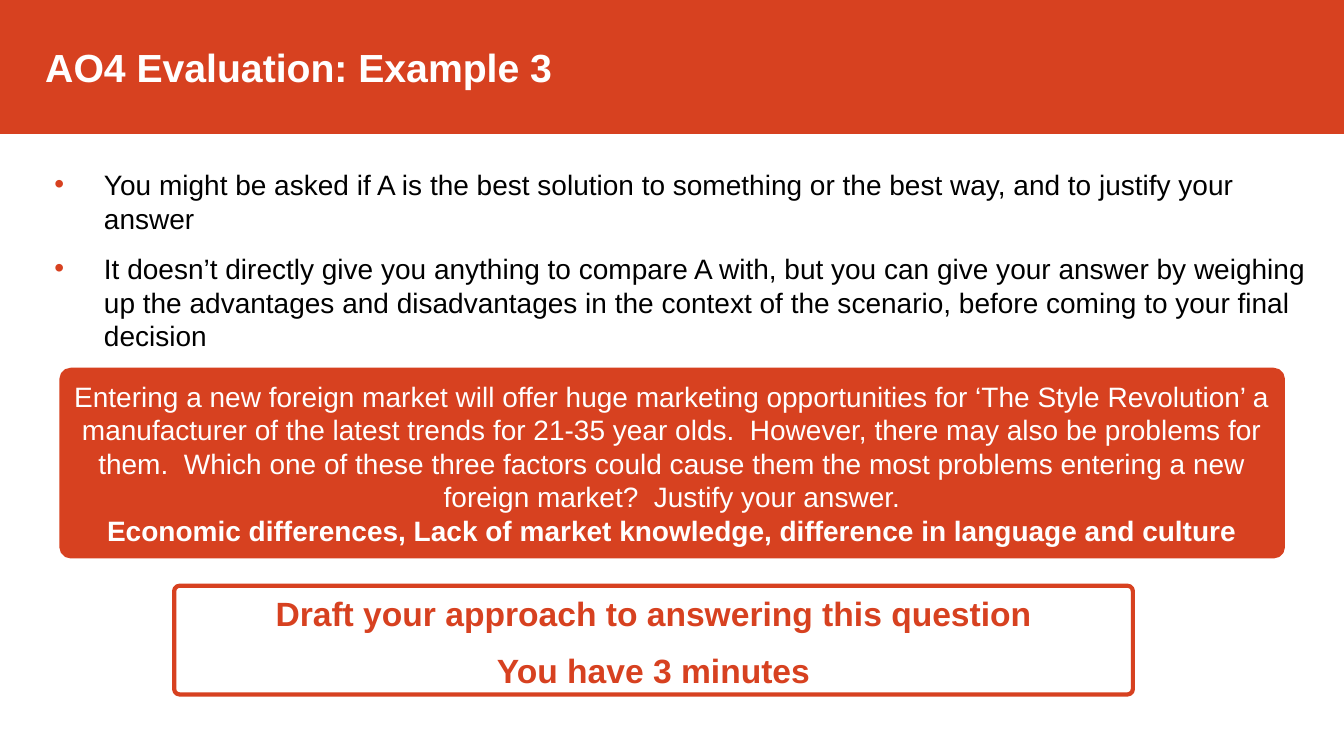
from lxml import etree
from pptx import Presentation
from pptx.dml.color import RGBColor
from pptx.enum.shapes import MSO_SHAPE as Shape
from pptx.enum.text import MSO_ANCHOR as Anchor, MSO_AUTO_SIZE as AutoSize, PP_ALIGN as Align
from pptx.oxml.ns import qn
from pptx.util import Cm, Pt

ORANGE, WHITE, BLACK = "D74120", "FFFFFF", "000000"
WIDTH, HEIGHT = 33.87, 19.05
INSET = 0.13
HANG = 1.25

POINTS = [
    "You might be asked if A is the best solution to something or the best way, "
    "and to justify your answer",
    "It doesn’t directly give you anything to compare A with, but you can give your "
    "answer by weighing up the advantages and disadvantages in the context of the "
    "scenario, before coming to your final decision",
]
QUESTION = [
    "Entering a new foreign market will offer huge marketing opportunities for "
    "‘The Style Revolution’ a manufacturer of the latest trends for 21-35 year olds.  "
    "However, there may also be problems for them.  Which one of these three factors "
    "could cause them the most problems entering a new foreign market?  "
    "Justify your answer.",
    "Economic differences, Lack of market knowledge, difference in language and culture",
]
TASK = ["Draft your approach to answering this question", "You have 3 minutes"]


def rgb(color):
    return RGBColor.from_string(color)


def place(sp, x, y, w, h):
    sp.left, sp.top, sp.width, sp.height = Cm(x), Cm(y), Cm(w), Cm(h)


def add_panel(s, kind, box, fill, line_width):
    sp = s.shapes.add_shape(kind, *map(Cm, box))
    sp.shadow.inherit = False
    if fill:
        sp.fill.solid()
        sp.fill.fore_color.rgb = rgb(fill)
    else:
        sp.fill.background()
    sp.line.color.rgb = rgb(ORANGE)
    sp.line.width = Pt(line_width)
    return sp


def write(sp, lines, size, color, bolds, align, anchor, gap=0):
    tf = sp.text_frame
    tf.text = "\n".join(lines)
    tf.word_wrap = True
    tf.auto_size = AutoSize.NONE
    tf.vertical_anchor = anchor
    tf.margin_left = tf.margin_right = tf.margin_top = tf.margin_bottom = Cm(INSET)
    for p, bold in zip(tf.paragraphs, bolds):
        p.alignment = align
        p.space_before = Pt(gap)
        for r in p.runs:
            r.font.name, r.font.size, r.font.bold = "Arial", Pt(size), bold
            r.font.color.rgb = rgb(color)
    return tf


def add_bullet(p):
    pPr = p._p.get_or_add_pPr()
    pPr.set("marL", str(Cm(HANG)))
    pPr.set("indent", str(-Cm(HANG)))
    color = etree.SubElement(pPr, qn("a:buClr"))
    etree.SubElement(color, qn("a:srgbClr"), val=ORANGE)
    etree.SubElement(pPr, qn("a:buFont"), typeface="Arial")
    etree.SubElement(pPr, qn("a:buChar"), char="•")


def add_header(s, x, y, w, h):
    banner = add_panel(s, Shape.RECTANGLE, (x, y, w, h), ORANGE, 1)
    title = s.shapes.title
    title.element.addprevious(banner.element)  # banner goes behind the title
    title_h = 1.35
    place(title, x, y + (h - title_h) / 2, w, title_h)
    tf = write(title, ["AO4 Evaluation: Example 3"], 28, WHITE, [True],
               Align.LEFT, Anchor.MIDDLE)
    tf.margin_left = Cm(1.14)


def add_points(s, x, y, w, h):
    body = s.placeholders[1]
    place(body, x, y, w, h)
    tf = write(body, POINTS, 20, BLACK, [False, False], Align.LEFT, Anchor.TOP, 12)
    for p in tf.paragraphs:
        add_bullet(p)


def add_card(s, x, y, w, h, fill=None):
    sp = add_panel(s, Shape.ROUNDED_RECTANGLE, (x, y, w, h), fill, 3)
    sp.adjustments[0] = 0.05
    return sp


def add_question(s, x, y, w, h):
    card = add_card(s, x, y, w, h, ORANGE)
    write(card, QUESTION, 20, WHITE, [False, True], Align.CENTER, Anchor.MIDDLE)


def add_task(s, x, y, w, h):
    card = add_card(s, x, y, w, h)
    write(card, TASK, 24, ORANGE, [True, True], Align.CENTER, Anchor.TOP, 12)


def main():
    prs = Presentation()
    prs.slide_width, prs.slide_height = Cm(WIDTH), Cm(HEIGHT)
    s = prs.slides.add_slide(prs.slide_layouts[1])

    # Header band with the title
    add_header(s, 0, 0, WIDTH, 3.35)
    # Explanation
    add_points(s, 1.24, 4.09, 32, 5.94)
    # Exam question
    add_question(s, 1.55, 9.32, 30.78, 4.7)
    # Timed task
    add_task(s, 4.39, 14.76, 24.16, 2.74)

    prs.save("out.pptx")


if __name__ == "__main__":
    main()
